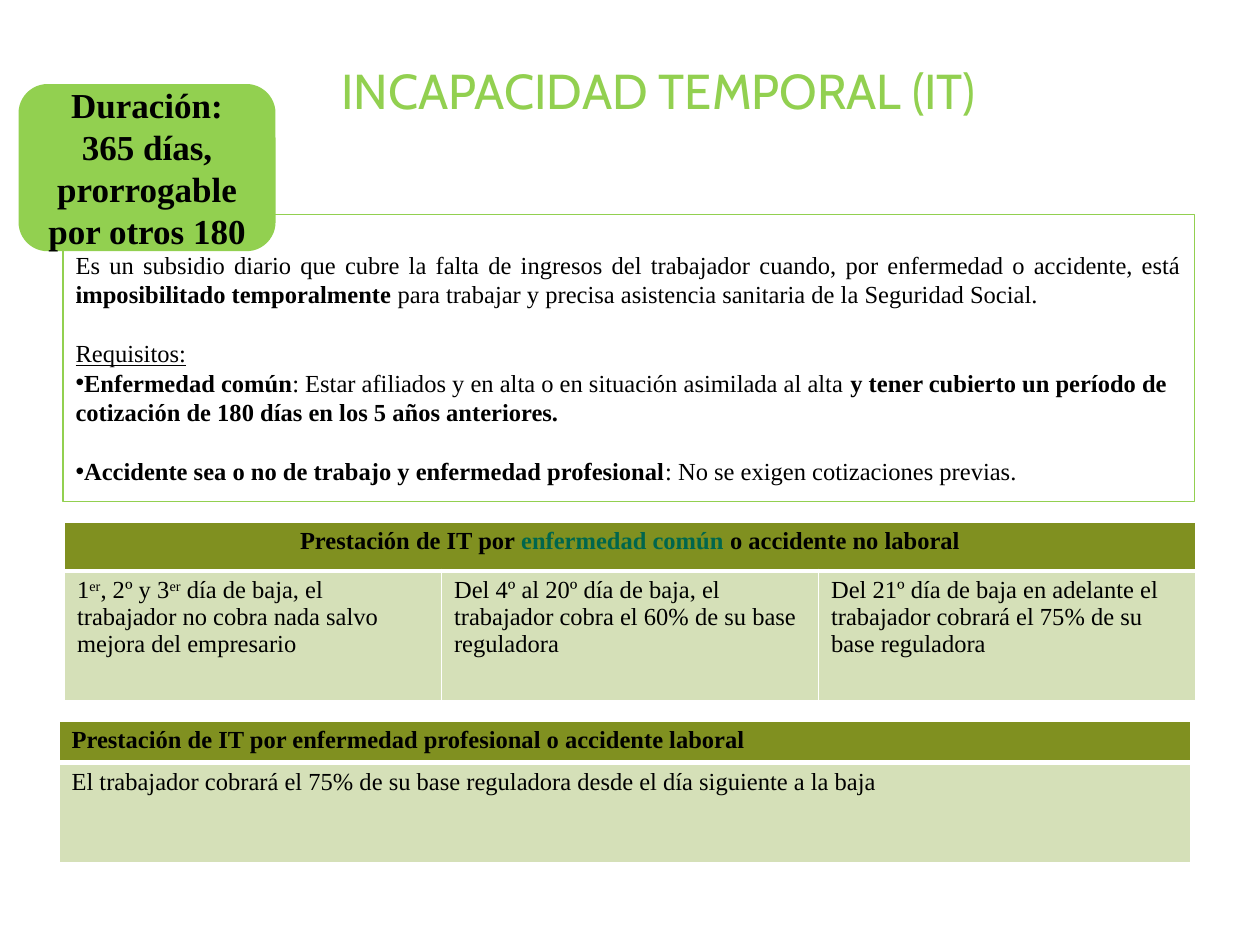
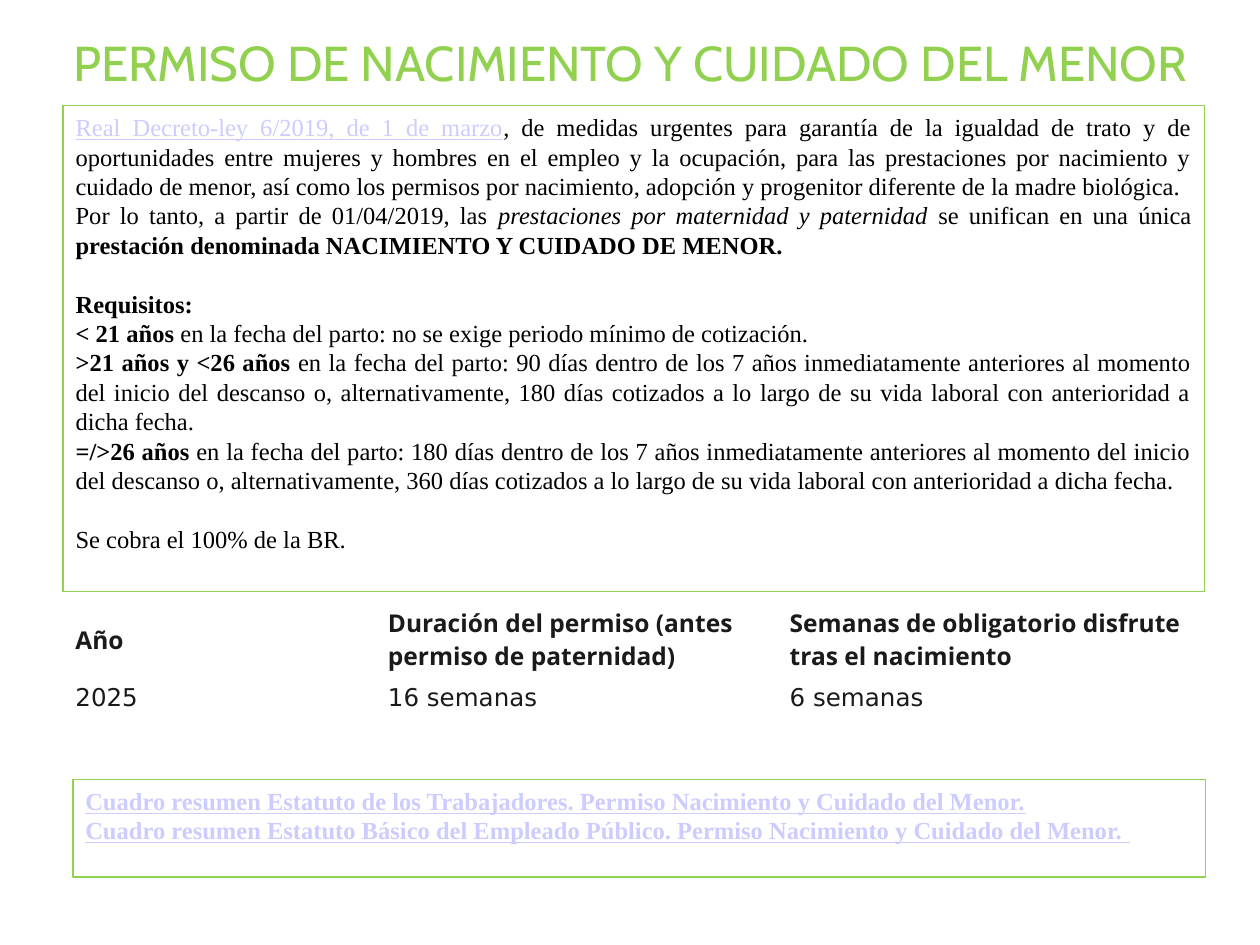
from lxml.etree import SubElement
from pptx import Presentation
from pptx.dml.color import RGBColor
from pptx.enum.shapes import MSO_SHAPE
from pptx.enum.text import MSO_ANCHOR, MSO_AUTO_SIZE, PP_ALIGN
from pptx.oxml.ns import qn
from pptx.util import Cm, Pt

GREEN, OLIVE, PALE_OLIVE = "92D050", "809020", "D5E0B8"
WHITE, BLACK, CHARCOAL = "FFFFFF", "000000", "1A1A1A"
LINK, TEAL = "CCCCFF", "00664D"
SERIF = "Times New Roman"
BODY_LEADING, TABLE_LEADING = 16.8, 15.4


def add_text(frame, paragraphs, size=14, font=SERIF, color=BLACK,
             align=PP_ALIGN.LEFT, leading=None):
    """Write paragraphs of (text, marks) runs.

    Run marks: b bold, i italic, u underline, l link colour, t teal, s superscript.
    A paragraph may start with a string of marks: g gap before, * bullet, < left aligned.
    """
    frame.word_wrap = True
    for index, runs in enumerate(paragraphs):
        marks = ""
        if isinstance(runs[0], str):
            marks, *runs = runs
        paragraph = frame.paragraphs[0] if index == 0 else frame.add_paragraph()
        paragraph.alignment = PP_ALIGN.LEFT if "<" in marks else align
        paragraph.space_before = Pt(leading if "g" in marks else 0)
        if leading:
            paragraph.line_spacing = Pt(leading)
        properties = paragraph._p.get_or_add_pPr()
        properties.set("marL", "0")
        properties.set("indent", "0")
        if "*" in marks:
            SubElement(properties, qn("a:buChar")).set("char", "•")
        else:
            SubElement(properties, qn("a:buNone"))
        for text, style in runs:
            run = paragraph.add_run()
            run.text = text
            run.font.name = font
            run.font.size = Pt(size)
            run.font.bold = "b" in style
            run.font.italic = "i" in style
            run.font.underline = "u" in style
            run_color = LINK if "l" in style else TEAL if "t" in style else color
            run.font.color.rgb = RGBColor.from_string(run_color)
            if "s" in style:
                run.font._element.set("baseline", "30000")


def add_grid(slide, left, top, widths, heights):
    """Add an unstyled table; all lengths are in centimetres."""
    table = slide.shapes.add_table(len(heights), len(widths), Cm(left), Cm(top),
                                   Cm(sum(widths)), Cm(sum(heights))).table
    table.first_row = table.horz_banding = False
    for column, width in zip(table.columns, widths):
        column.width = Cm(width)
    for row, height in zip(table.rows, heights):
        row.height = Cm(height)
    return table


presentation = Presentation()
presentation.slide_width, presentation.slide_height = Cm(25.4), Cm(19.05)

disability_text = [
    [("Es un subsidio diario que cubre la falta de ingresos del trabajador cuando, por "
      "enfermedad o accidente, está ", ""),
     ("imposibilitado temporalmente ", "b"),
     ("para trabajar y precisa asistencia sanitaria de la Seguridad Social.", "")],
    ["g", ("Requisitos:", "u")],
    ["*<", ("Enfermedad común", "b"),
     (": Estar afiliados y en alta o en situación asimilada al alta ", ""),
     ("y tener cubierto un período de cotización de 180 días en los 5 años anteriores.", "b")],
    ["g*<", ("Accidente sea o no de trabajo y enfermedad profesional", "b"),
     (": No se exigen cotizaciones previas.", "")],
]
birth_text = [
    [("Real Decreto-ley 6/2019, de 1 de marzo", "ul"),
     (", de medidas urgentes para garantía de la igualdad de trato y de oportunidades entre "
      "mujeres y hombres en el empleo y la ocupación, para las prestaciones por nacimiento y "
      "cuidado de menor, así como los permisos por nacimiento, adopción y progenitor "
      "diferente de la madre biológica.", "")],
    [("Por lo tanto, a partir de 01/04/2019, las ", ""),
     ("prestaciones por maternidad y paternidad ", "i"),
     ("se unifican en una única ", ""),
     ("prestación denominada NACIMIENTO Y CUIDADO DE MENOR.", "b")],
    ["g", ("Requisitos:", "b")],
    [("< 21 años ", "b"),
     ("en la fecha del parto: no se exige periodo mínimo de cotización.", "")],
    [(">21 años y <26 años ", "b"),
     ("en la fecha del parto: 90 días dentro de los 7 años inmediatamente anteriores al "
      "momento del inicio del descanso o, alternativamente, 180 días cotizados a lo largo de "
      "su vida laboral con anterioridad a dicha fecha.", "")],
    [("=/>26 años ", "b"),
     ("en la fecha del parto: 180 días dentro de los 7 años inmediatamente anteriores al "
      "momento del inicio del descanso o, alternativamente, 360 días cotizados a lo largo de "
      "su vida laboral con anterioridad a dicha fecha.", "")],
    ["g", ("Se cobra el 100% de la BR.", "")],
]

# Title and framed body of both slides
slides, framed_boxes = [], []
for title_text, title_place, body_text, body_place, body_inset in [
    ("INCAPACIDAD TEMPORAL (IT)", (3.18, 0.99, 20.19, 1.63),
     disability_text, (1.27, 4.32, 22.81, 5.79), 0.72),
    ("PERMISO DE NACIMIENTO Y CUIDADO DEL MENOR", (0, 0.53, 25.4, 1.45),
     birth_text, (1.27, 2.13, 23.01, 9.8), 0.13),
]:
    slide = presentation.slides.add_slide(presentation.slide_layouts[1])
    title, body = slide.shapes.title, slide.placeholders[1]
    for shape, place in [(title, title_place), (body, body_place)]:
        shape.left, shape.top, shape.width, shape.height = map(Cm, place)
        shape.text_frame.auto_size = MSO_AUTO_SIZE.NONE
    title.text_frame.vertical_anchor = MSO_ANCHOR.MIDDLE
    add_text(title.text_frame, [[(title_text, "")]], 28, "Cabin", GREEN, PP_ALIGN.CENTER)
    body.text_frame.vertical_anchor = MSO_ANCHOR.TOP
    body.text_frame.margin_top = Cm(body_inset)
    add_text(body.text_frame, body_text, align=PP_ALIGN.JUSTIFY, leading=BODY_LEADING)
    slides.append(slide)
    framed_boxes.append(body)
disability_slide, birth_slide = slides

# Benefit tables
common_illness = [
    [[("Prestación de IT por ", "b"), ("enfermedad común ", "bt"),
      ("o accidente no laboral", "b")]],
    [[("1", ""), ("er", "s"), (", 2º y 3", ""), ("er", "s"),
      (" día de baja, el trabajador no cobra nada salvo mejora del empresario", "")],
     [("Del 4º al 20º día de baja, el trabajador cobra el 60% de su base reguladora", "")],
     [("Del 21º día de baja en adelante el trabajador cobrará el 75% de su base "
       "reguladora", "")]],
]
work_illness = [
    [[("Prestación de IT por enfermedad profesional o accidente laboral", "b")]],
    [[("El trabajador cobrará el 75% de su base reguladora desde el día siguiente a la "
       "baja", "")]],
]
for rows, left, top, widths, heights, header_align in [
    (common_illness, 1.3, 10.52, [7.6] * 3, [0.99, 2.62], PP_ALIGN.CENTER),
    (work_illness, 1.19, 14.53, [22.81], [0.84, 2.03], PP_ALIGN.LEFT),
]:
    table = add_grid(disability_slide, left, top, widths, heights)
    if len(widths) > 1:
        table.cell(0, 0).merge(table.cell(0, len(widths) - 1))
    for row_index, row in enumerate(table.rows):
        is_header = row_index == 0
        for cell in row.cells:
            cell_properties = cell._tc.get_or_add_tcPr()
            for side in "LRTB":
                thick = (is_header and side == "B") or (not is_header and side == "T")
                border = SubElement(cell_properties, qn(f"a:ln{side}"))
                border.set("w", str(Pt(3 if thick else 1)))
                fill = SubElement(border, qn("a:solidFill"))
                SubElement(fill, qn("a:srgbClr")).set("val", WHITE)
            cell.fill.solid()
            cell.fill.fore_color.rgb = RGBColor.from_string(OLIVE if is_header else PALE_OLIVE)
        for cell, runs in zip(row.cells, rows[row_index]):
            add_text(cell.text_frame, [runs], leading=TABLE_LEADING,
                     align=header_align if is_header else PP_ALIGN.LEFT)

# Duration callout
callout = disability_slide.shapes.add_shape(
    MSO_SHAPE.ROUNDED_RECTANGLE, Cm(0.41), Cm(1.73), Cm(5.11), Cm(3.3))
callout.shadow.inherit = False
callout.fill.solid()
callout.fill.fore_color.rgb = RGBColor.from_string(GREEN)
callout.line.color.rgb = RGBColor.from_string(GREEN)
callout.line.width = Pt(2)
callout.text_frame.vertical_anchor = MSO_ANCHOR.MIDDLE
add_text(callout.text_frame, [[("Duración: 365 días, prorrogable por otros 180", "b")]],
         size=20, align=PP_ALIGN.CENTER, leading=24)

# Leave duration table
leave_rows = [
    ("Año", "Duración del permiso (antes permiso de paternidad)",
     "Semanas de obligatorio disfrute tras el nacimiento"),
    ("2025", "16 semanas", "6 semanas"),
]
leave_table = add_grid(birth_slide, 1.32, 12.12, [6.3, 8.1, 8.59], [1.4, 0.79])
for row, texts, font, style in zip(leave_table.rows, leave_rows,
                                   ["Open Sans", "DejaVu Sans"], ["b", ""]):
    for cell, text in zip(row.cells, texts):
        cell.fill.background()
        cell.vertical_anchor = MSO_ANCHOR.MIDDLE
        cell.margin_left = cell.margin_right = Cm(0.2)
        cell.margin_top = cell.margin_bottom = Cm(0.1)
        add_text(cell.text_frame, [[(text, style)]], font=font, color=CHARCOAL)

# Reference links
links = birth_slide.shapes.add_textbox(Cm(1.47), Cm(15.72), Cm(22.83), Cm(1.96))
add_text(links.text_frame, [
    [("Cuadro resumen Estatuto de los Trabajadores. Permiso Nacimiento y Cuidado del Menor.",
      "bul")],
    [("Cuadro resumen Estatuto Básico del Empleado Público. Permiso Nacimiento y Cuidado "
      "del Menor. ", "bul")],
], align=PP_ALIGN.JUSTIFY, leading=BODY_LEADING)
framed_boxes.append(links)

for box in framed_boxes:
    box.fill.solid()
    box.fill.fore_color.rgb = RGBColor.from_string(WHITE)
    box.line.color.rgb = RGBColor.from_string(GREEN)
    box.line.width = Pt(0.75)

presentation.save("out.pptx")
